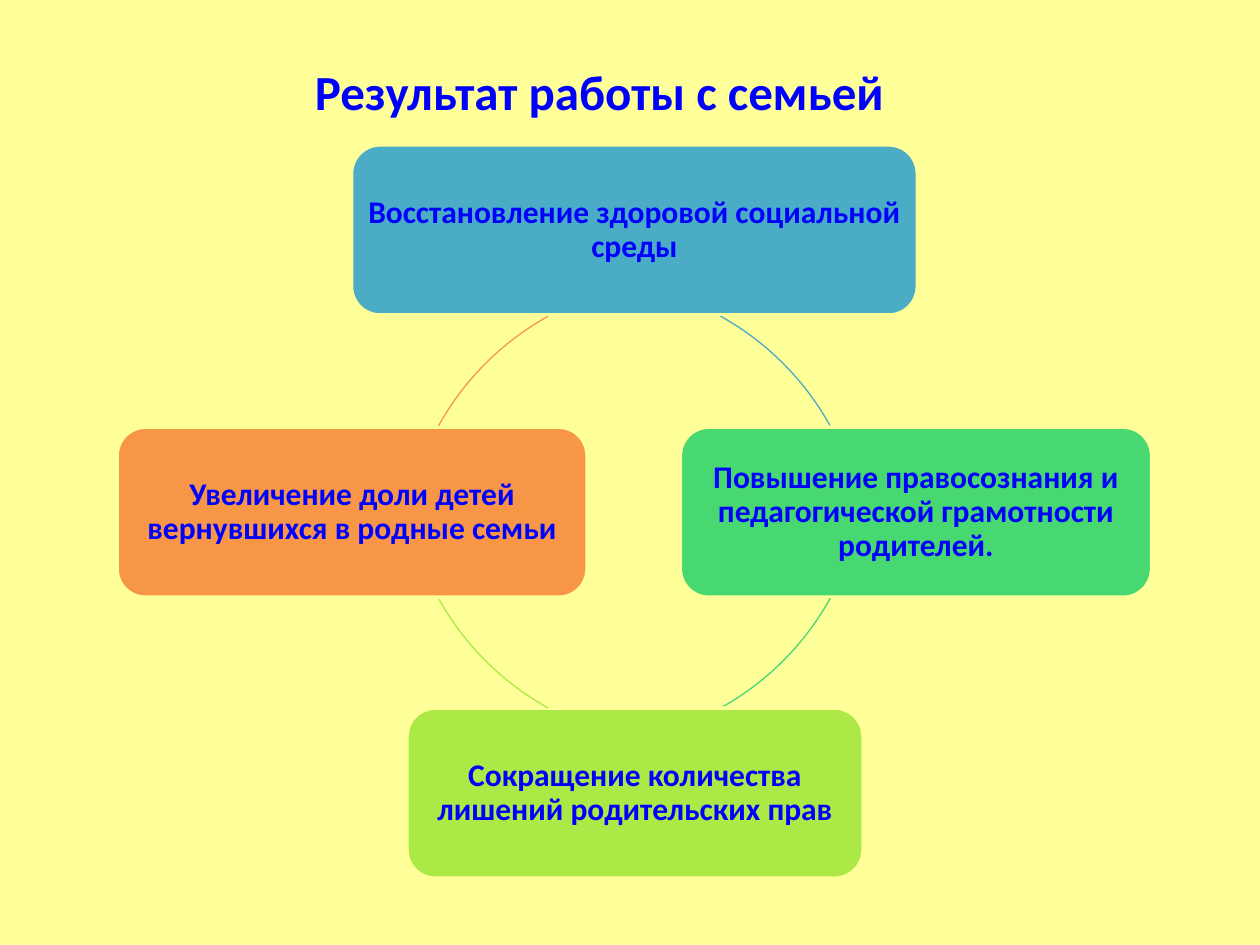
"""Build a slide with a four-step cycle of results of work with families."""
from dataclasses import dataclass

from pptx import Presentation
from pptx.dml.color import RGBColor
from pptx.enum.shapes import MSO_SHAPE as Shape
from pptx.enum.text import MSO_ANCHOR as Anchor, PP_ALIGN as Align
from pptx.util import Inches, Pt


@dataclass(frozen=True)
class Theme:
    background: RGBColor = RGBColor.from_string("FFFF99")
    text: RGBColor = RGBColor.from_string("0000FF")
    blue: RGBColor = RGBColor.from_string("4BACC6")
    green: RGBColor = RGBColor.from_string("47D872")
    lime: RGBColor = RGBColor.from_string("ACE946")
    orange: RGBColor = RGBColor.from_string("F79646")
    font: str = "Calibri"
    title_size: Pt = Pt(28)
    body_size: Pt = Pt(18)


theme = Theme()


def write(shape, text, size, align=Align.LEFT, anchor=Anchor.TOP, spacing=1.0):
    frame = shape.text_frame
    frame.word_wrap = True
    frame.vertical_anchor = anchor
    paragraph = frame.paragraphs[0]
    paragraph.alignment = align
    paragraph.line_spacing = spacing
    run = paragraph.add_run()
    run.text = text
    run.font.name = theme.font
    run.font.size = size
    run.font.bold = True
    run.font.color.rgb = theme.text


presentation = Presentation()
presentation.slide_width = Inches(10)
presentation.slide_height = Inches(7.5)
slide = presentation.slides.add_slide(presentation.slide_layouts[6])
slide.background.fill.solid()
slide.background.fill.fore_color.rgb = theme.background

CENTER_X, CENTER_Y = 5.035, 4.065
BOX_HEIGHT = 1.35
ARC_SIZE, ARC_SHIFT = 4.47, 0.4
ARC_START, ARC_SWEEP = 299, 32
DEGREE = 0.6

steps = [
    ("Восстановление здоровой социальной среды", theme.blue, 2.79, 1.15, 4.49, -1, 1),
    ("Повышение правосознания и педагогической грамотности родителей.",
     theme.green, 5.4, 3.39, 3.74, -1, -1),
    ("Сокращение количества лишений родительских прав",
     theme.lime, 3.23, 5.62, 3.62, 1, -1),
    ("Увеличение доли детей вернувшихся в родные семьи",
     theme.orange, 0.93, 3.39, 3.73, 1, 1),
]

for index, (text, color, left, top, width, side_x, side_y) in enumerate(steps):
    box = slide.shapes.add_shape(
        Shape.ROUNDED_RECTANGLE, Inches(left), Inches(top), Inches(width), Inches(BOX_HEIGHT))
    box.shadow.inherit = False
    box.fill.solid()
    box.fill.fore_color.rgb = color
    box.line.color.rgb = theme.background
    box.line.width = Pt(2)
    box.text_frame.margin_left = box.text_frame.margin_right = 0
    write(box, text, theme.body_size, align=Align.CENTER, anchor=Anchor.MIDDLE, spacing=0.9)

    arc = slide.shapes.add_shape(
        Shape.ARC,
        Inches(CENTER_X + side_x * ARC_SHIFT - ARC_SIZE / 2),
        Inches(CENTER_Y + side_y * ARC_SHIFT - ARC_SIZE / 2),
        Inches(ARC_SIZE), Inches(ARC_SIZE))
    start = (ARC_START + 90 * index) % 360
    arc.adjustments[0] = start * DEGREE
    arc.adjustments[1] = (start + ARC_SWEEP) * DEGREE
    arc.shadow.inherit = False
    arc.fill.background()
    arc.line.color.rgb = color
    arc.line.width = Pt(0.75)

title = slide.shapes.add_textbox(Inches(2.4), Inches(0.44), Inches(5.24), Inches(0.57))
write(title, "Результат работы с семьей", theme.title_size)

presentation.save("out.pptx")
